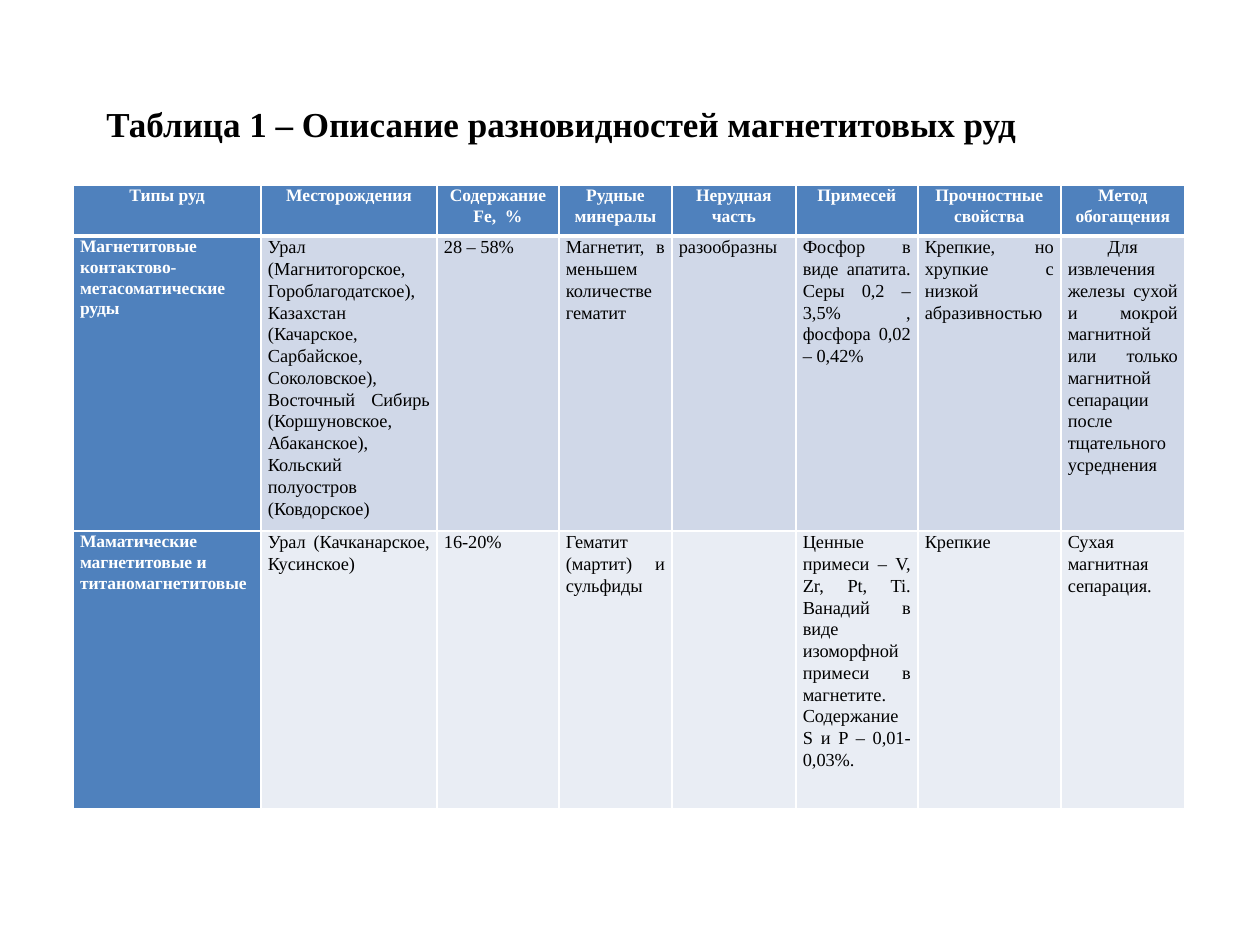
from lxml.etree import SubElement
from pptx import Presentation
from pptx.dml.color import RGBColor
from pptx.enum.text import MSO_AUTO_SIZE, PP_ALIGN
from pptx.oxml.ns import qn
from pptx.util import Pt

HUES = {"head": "4F81BD", "odd": "D0D8E8", "even": "E9EDF4", "white": "FFFFFF", "black": "000000"}
FONT = "Times New Roman"
TITLE = "Таблица 1 – Описание разновидностей магнетитовых руд"
ROWS = [
    ["Типы руд", "Месторождения", "Содержание Fe,  %", "Рудные минералы",
     "Нерудная часть", "Примесей", "Прочностные свойства", "Метод обогащения"],
    ["Магнетитовые контактово-метасоматические руды",
     "Урал (Магнитогорское, Гороблагодатское), Казахстан (Качарское, Сарбайское, "
     "Соколовское), Восточный Сибирь (Коршуновское, Абаканское), "
     "Кольский полуостров (Ковдорское)",
     "28 – 58%",
     "Магнетит, в меньшем количестве гематит",
     "разообразны",
     "Фосфор в виде апатита. Серы 0,2 – 3,5% , фосфора 0,02 – 0,42%",
     "Крепкие, но хрупкие с низкой абразивностью",
     " Для  извлечения железы сухой и мокрой магнитной или только магнитной "
     "сепарации после тщательного усреднения"],
    ["Маматические магнетитовые и титаномагнетитовые",
     "Урал (Качканарское, Кусинское)",
     "16-20%",
     "Гематит (мартит) и сульфиды",
     "",
     "Ценные примеси – V, Zr, Pt, Ti. Ванадий в виде изоморфной примеси в магнетите. "
     "Содержание S и P – 0,01-0,03%.",
     "Крепкие",
     "Сухая магнитная сепарация. "],
]
WIDTHS = [188, 176, 122, 113, 124, 122, 143, 124]
HEIGHTS = [51, 295, 278]


def px(n):
    return round(n * 914400 / 126)


def hue(name):
    return RGBColor.from_string(HUES[name])


def write(par, text, size, color, bold):
    run = par.add_run()
    run.text = text
    font = run.font
    font.name, font.size, font.bold = FONT, Pt(size), bold
    font.color.rgb = hue(color)


def edge(cell, side, width):
    line = SubElement(cell._tc.get_or_add_tcPr(), qn("a:ln" + side), w=str(Pt(width)))
    fill = SubElement(line, qn("a:solidFill"))
    SubElement(fill, qn("a:srgbClr"), val=HUES["white"])


def style(cell, text, row, col):
    head = row == 0 or col == 0
    for side in "LRTB":
        thick = (row == 0 and side == "B") or (row == 1 and side == "T")
        edge(cell, side, 3 if thick else 1)
    cell.fill.solid()
    cell.fill.fore_color.rgb = hue("head" if head else "odd" if row % 2 else "even")
    cell.margin_left = cell.margin_right = px(7)
    cell.margin_top = cell.margin_bottom = 0
    if not text:
        return
    par = cell.text_frame.paragraphs[0]
    par.alignment = PP_ALIGN.CENTER if row == 0 else PP_ALIGN.LEFT if head else PP_ALIGN.JUSTIFY
    par.line_spacing = 1.07
    par.space_after = Pt(8)
    write(par, text, 10 if head else 10.5, "white" if head else "black", head)


deck = Presentation()
deck.slide_width, deck.slide_height = px(1260), px(945)
slide = deck.slides.add_slide(deck.slide_layouts[6])

frame = slide.shapes.add_table(len(ROWS), len(WIDTHS), px(73), px(185),
                               px(sum(WIDTHS)), px(sum(HEIGHTS)))
table = frame.table
for col, width in zip(table.columns, WIDTHS):
    col.width = px(width)
for line, height in zip(table.rows, HEIGHTS):
    line.height = px(height)
for r, texts in enumerate(ROWS):
    for c, text in enumerate(texts):
        style(table.cell(r, c), text, r, c)

box = slide.shapes.add_textbox(px(94), px(96), px(1002), px(55)).text_frame
box.word_wrap = True
box.auto_size = MSO_AUTO_SIZE.SHAPE_TO_FIT_TEXT
write(box.paragraphs[0], TITLE, 20, "black", True)

deck.save("out.pptx")
